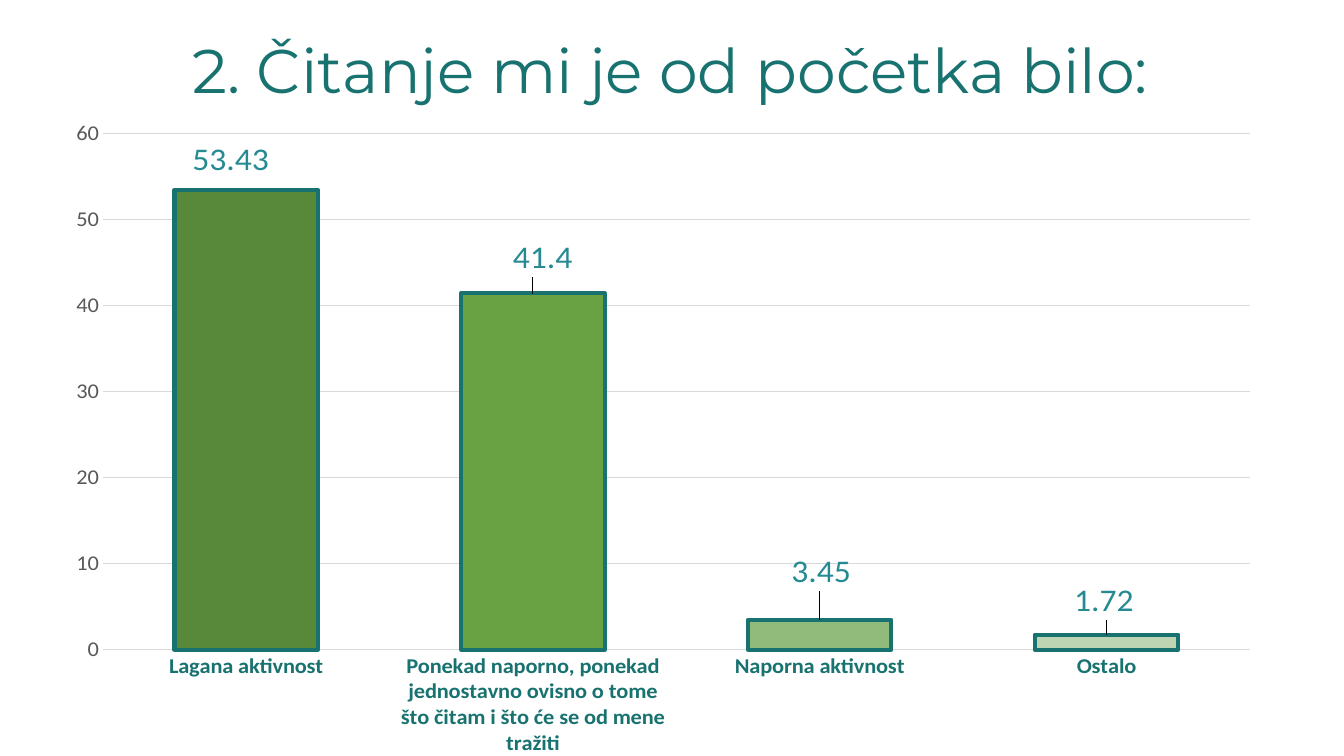
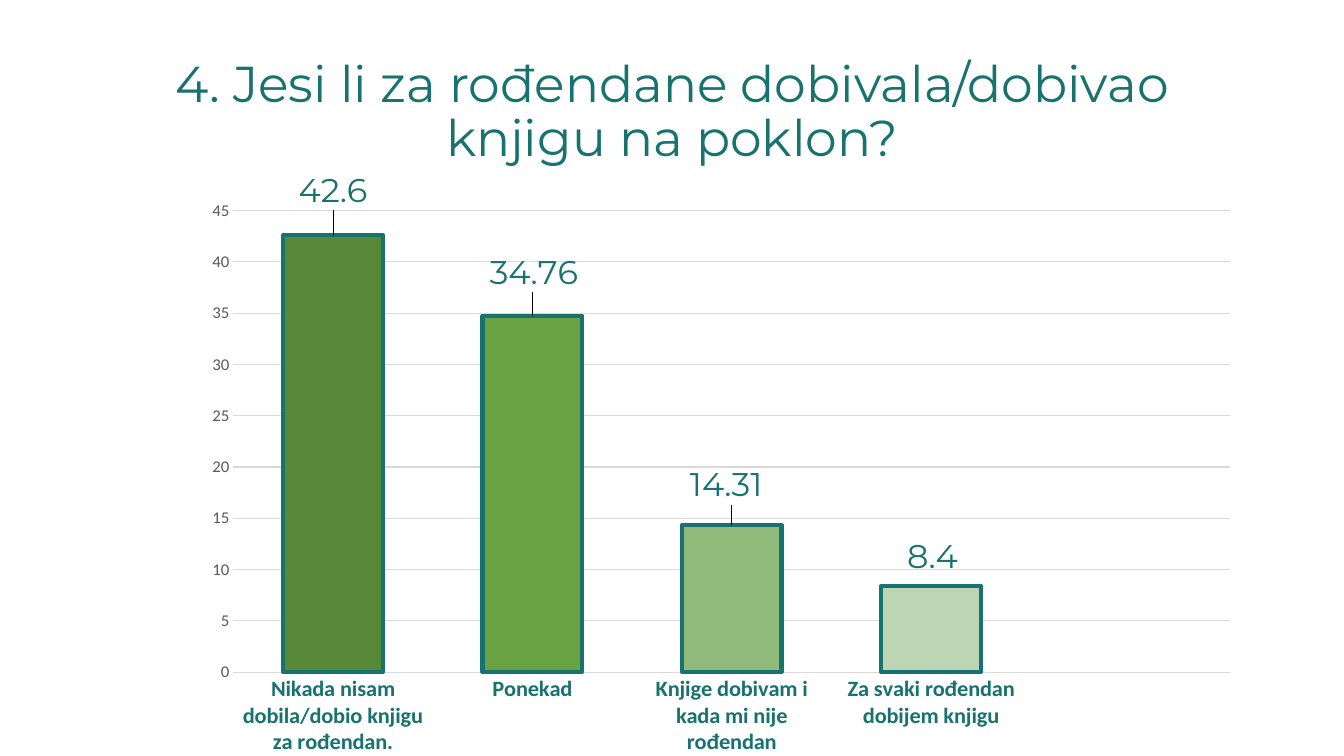
"""Build two survey result slides, each with a title and a column chart."""
from lxml import etree
from pptx import Presentation
from pptx.chart.data import CategoryChartData
from pptx.dml.color import RGBColor
from pptx.enum.chart import XL_CHART_TYPE, XL_LABEL_POSITION, XL_TICK_MARK
from pptx.enum.text import MSO_ANCHOR, PP_ALIGN
from pptx.oxml import parse_xml
from pptx.oxml.ns import nsdecls
from pptx.util import Pt

COLUMNS = XL_CHART_TYPE.COLUMN_CLUSTERED
OUTSIDE_END = XL_LABEL_POSITION.OUTSIDE_END
NO_TICK = XL_TICK_MARK.NONE
MIDDLE = MSO_ANCHOR.MIDDLE
CENTER = PP_ALIGN.CENTER

COLORS = {
    "teal": "187270",
    "light_teal": "268A92",
    "axis_gray": "595959",
    "grid_gray": "D9D9D9",
    "white": "FFFFFF",
    "bar_base": "70AD47",
}
BAR_SHADES = ["588938", "69A242", "90BB7B", "BED5B4"]
HEADING_FONT = "Montserrat"
BODY_FONT = "Calibri"

QUESTIONS = [
    {
        "title": "2. Čitanje mi je od početka bilo:",
        "title_box": (65, 0, 828, 104.4),
        "title_size": 44,
        "chart_box": (47.5, 77.8, 862.6, 462.2),
        "plot_area": (0.03, 0.04, 0.95, 0.85),
        "answers": {
            "Lagana aktivnost": 53.43,
            "Ponekad naporno, ponekad jednostavno ovisno o tome "
            "što čitam i što će se od mene tražiti": 41.4,
            "Naporna aktivnost": 3.45,
            "Ostalo": 1.72,
        },
        "scale": (60, 10),
        "scale_size": 16,
        "label_font": BODY_FONT,
        "label_color": "light_teal",
        "label_shifts": [(-11, -5), (7, -9), (1, -19), (-2, -8)],
        "label_filled": True,
    },
    {
        "title": "4. Jesi li za rođendane dobivala/dobivao knjigu na poklon?",
        "title_box": (66, 28.8, 828, 104.4),
        "title_size": 36,
        "chart_box": (75.6, 113, 828, 427),
        "plot_area": (0.11, 0.09, 0.86, 0.79),
        "answers": {
            "Nikada nisam dobila/dobio knjigu za rođendan.": 42.6,
            "Ponekad": 34.76,
            "Knjige dobivam i kada mi nije rođendan": 14.31,
            "Za svaki rođendan dobijem knjigu": 8.4,
            "": None,
        },
        "scale": (45, 5),
        "scale_size": 12,
        "label_font": HEADING_FONT,
        "label_color": "teal",
        "label_shifts": [(0, -15), (1, -14), (-4, -12), (1, -4)],
        "label_filled": False,
    },
]


def add_text(slide, text, *, box, size, font, color):
    frame = slide.shapes.add_textbox(*map(Pt, box)).text_frame
    frame.word_wrap = True
    frame.vertical_anchor = MIDDLE
    paragraph = frame.paragraphs[0]
    paragraph.alignment = CENTER
    paragraph.line_spacing = 0.9
    run = paragraph.add_run()
    run.text = text
    run.font.size = Pt(size)
    run.font.name = font
    run.font.color.rgb = RGBColor.from_string(color)


def manual_layout(**settings):
    layout = parse_xml(f"<c:layout {nsdecls('c')}><c:manualLayout/></c:layout>")
    namespace = etree.QName(layout).namespace
    for tag, value in settings.items():
        etree.SubElement(layout[0], f"{{{namespace}}}{tag}").set("val", str(value))
    return layout


deck = Presentation()
deck.slide_width, deck.slide_height = Pt(960), Pt(540)

for question in QUESTIONS:
    slide = deck.slides.add_slide(deck.slide_layouts[6])
    add_text(slide, question["title"], box=question["title_box"],
             size=question["title_size"], font=HEADING_FONT, color=COLORS["teal"])

    survey = CategoryChartData()
    survey.categories = list(question["answers"])
    survey.add_series("Series 1", list(question["answers"].values()))
    chart = slide.shapes.add_chart(
        COLUMNS, *map(Pt, question["chart_box"]), survey).chart
    chart.has_title = False
    chart.has_legend = False
    chart.font.name = BODY_FONT

    x, y, width, height = question["plot_area"]
    plot_area = chart.plots[0]._element.getparent()
    for layout in plot_area.xpath("./c:layout"):
        plot_area.remove(layout)
    plot_area.insert(0, manual_layout(
        layoutTarget="inner", xMode="edge", yMode="edge", x=x, y=y, w=width, h=height))

    answer_axis, scale_axis = chart.category_axis, chart.value_axis
    for axis, size, color, bold in (
        (answer_axis, 16, "teal", True),
        (scale_axis, question["scale_size"], "axis_gray", False),
    ):
        axis.major_tick_mark = NO_TICK
        axis.minor_tick_mark = NO_TICK
        axis.format.line.fill.background()
        font = axis.tick_labels.font
        font.name, font.size, font.bold = BODY_FONT, Pt(size), bold
        font.color.rgb = RGBColor.from_string(COLORS[color])
    scale_axis.minimum_scale = 0
    scale_axis.maximum_scale, scale_axis.major_unit = question["scale"]
    scale_axis.has_major_gridlines = True
    grid_line = scale_axis.major_gridlines.format.line
    grid_line.width = Pt(0.75)
    grid_line.color.rgb = RGBColor.from_string(COLORS["grid_gray"])

    bars = chart.plots[0]
    bars.gap_width = 100
    bars.vary_by_categories = False
    shares = bars.series[0]
    shares.format.fill.solid()
    shares.format.fill.fore_color.rgb = RGBColor.from_string(COLORS["bar_base"])

    chart_width, chart_height = question["chart_box"][2:]
    for index, (shade, (shift_x, shift_y)) in enumerate(
            zip(BAR_SHADES, question["label_shifts"])):
        bar = shares.points[index]
        bar.format.fill.solid()
        bar.format.fill.fore_color.rgb = RGBColor.from_string(shade)
        bar.format.line.width = Pt(3)
        bar.format.line.color.rgb = RGBColor.from_string(COLORS["teal"])

        label = bar.data_label
        label.font.name = question["label_font"]
        label.font.size = Pt(24)
        label.font.bold = False
        label.font.color.rgb = RGBColor.from_string(COLORS[question["label_color"]])
        label.position = OUTSIDE_END
        label_xml = shares._element.xpath("./c:dLbls/c:dLbl")[index]
        label_xml.insert(1, manual_layout(
            x=round(shift_x / chart_width, 4), y=round(shift_y / chart_height, 4)))
        if question["label_filled"]:
            label_xml.insert(2, parse_xml(
                f"<c:spPr {nsdecls('c', 'a')}><a:solidFill>"
                f"<a:srgbClr val=\"{COLORS['white']}\"/></a:solidFill></c:spPr>"))

deck.save("out.pptx")
